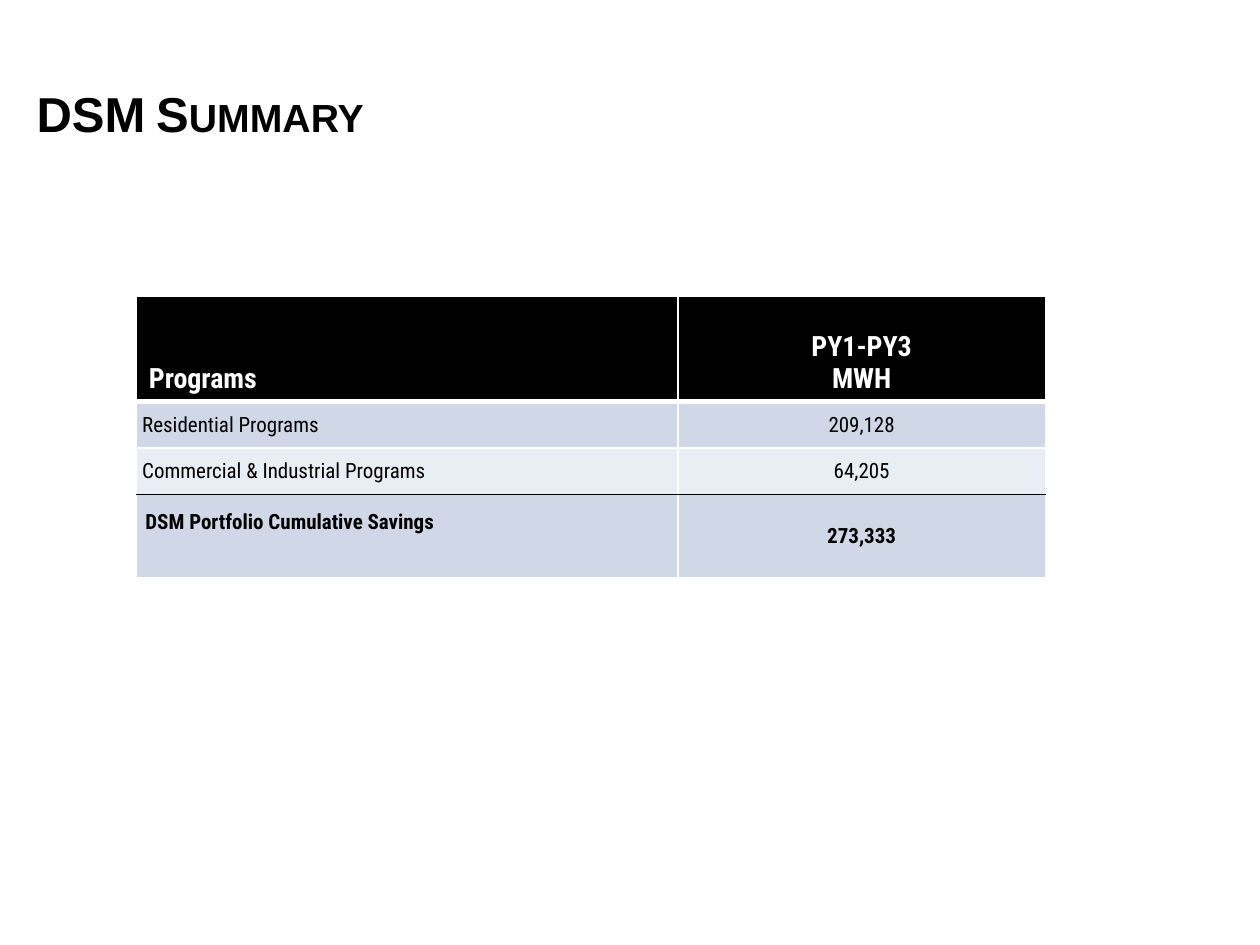
from lxml import etree
from pptx import Presentation
from pptx import util as u
from pptx.dml import color
from pptx.enum import text
from pptx.oxml import ns

# Content
TITLE = "DSM Summary"
ROWS = [
    (["Programs"], ["PY1-PY3", "MWH"]),
    (["Residential Programs"], ["209,128"]),
    (["Commercial & Industrial Programs"], ["64,205"]),
    (["DSM Portfolio Cumulative Savings"], ["273,333"]),
]

# Style, lengths in points
COLORS = {"black": "000000", "white": "FFFFFF", "band": "D0D8E8", "light": "E9EDF4"}
FILLS = ["black", "band", "light", "band"]
COL_WIDTHS = [309.6, 209.8]
ROW_HEIGHTS = [60, 26.5, 26.5, 47.5]
TABLE_LEFT, TABLE_TOP = 77.9, 169.5
HEAD, TOTAL = 0, len(ROWS) - 1
# Cell margins: left, top, right, bottom
HEAD_MARGINS = (7.2, 3.6, 7.2, 3.6)
LABEL_MARGINS = (3.4, 0.7, 0.7, 0)
VALUE_MARGINS = (0.7, 0.7, 0.7, 0)
TOTAL_MARGINS = (5.2, 0, 5.2, 15)


def rgb(name):
    return color.RGBColor.from_string(COLORS[name])


def add_run(p, words, font, size, bold, name):
    r = p.add_run()
    r.text = words
    r.font.name, r.font.size, r.font.bold = font, u.Pt(size), bold
    r.font.color.rgb = rgb(name)
    return r


def set_margins(box, margins):
    box.margin_left, box.margin_top, box.margin_right, box.margin_bottom = map(u.Pt, margins)


def add_border(tcPr, side, name, width):
    ln = etree.SubElement(tcPr, ns.qn(f"a:ln{side}"), w=str(u.Pt(width)))
    fill = etree.SubElement(ln, ns.qn("a:solidFill"))
    etree.SubElement(fill, ns.qn("a:srgbClr"), val=COLORS[name])


def format_cell(cell, lines, row, col):
    head, total = row == HEAD, row == TOTAL
    if head:
        margins = HEAD_MARGINS
    elif col:
        margins = VALUE_MARGINS
    else:
        margins = TOTAL_MARGINS if total else LABEL_MARGINS
    set_margins(cell, margins)
    cell.vertical_anchor = text.MSO_ANCHOR.BOTTOM if head else text.MSO_ANCHOR.MIDDLE

    tf = cell.text_frame
    for i, line in enumerate(lines):
        p = tf.add_paragraph() if i else tf.paragraphs[0]
        p.alignment = text.PP_ALIGN.CENTER if col else text.PP_ALIGN.LEFT
        add_run(p, line, "Roboto Condensed", 16 if head else 12,
                head or total, "white" if head else "black")

    # Borders come before the fill; a black rule sits above the total
    tcPr = cell._tc.get_or_add_tcPr()
    add_border(tcPr, "L", "white", 1)
    add_border(tcPr, "R", "white", 1)
    add_border(tcPr, "T", "black" if total else "white", 3 if row == HEAD + 1 else 1)
    add_border(tcPr, "B", "black" if row == TOTAL - 1 else "white", 3 if head else 1)
    cell.fill.solid()
    cell.fill.fore_color.rgb = rgb(FILLS[row])


prs = Presentation()
prs.slide_width, prs.slide_height = u.Pt(720), u.Pt(540)
s = prs.slides.add_slide(prs.slide_layouts[5])

# Title
title = s.shapes.title
title.left, title.top, title.width, title.height = map(u.Pt, (13.7, 8.6, 539.3, 67.7))
tf = title.text_frame
tf.word_wrap = True
tf.auto_size = text.MSO_AUTO_SIZE.NONE
tf.vertical_anchor = text.MSO_ANCHOR.TOP
set_margins(tf, (7.2, 39, 7.2, 0))
p = tf.paragraphs[0]
p.alignment = text.PP_ALIGN.LEFT
r = add_run(p, TITLE, "Arial", 28, True, "black")
r._r.get_or_add_rPr().set("cap", "small")

# Savings table
frame = s.shapes.add_table(len(ROWS), len(COL_WIDTHS), u.Pt(TABLE_LEFT), u.Pt(TABLE_TOP),
                           u.Pt(sum(COL_WIDTHS)), u.Pt(sum(ROW_HEIGHTS)))
table = frame.table
for column, width in zip(table.columns, COL_WIDTHS):
    column.width = u.Pt(width)
for i, (height, cells) in enumerate(zip(ROW_HEIGHTS, ROWS)):
    table.rows[i].height = u.Pt(height)
    for j, lines in enumerate(cells):
        format_cell(table.cell(i, j), lines, i, j)

prs.save("out.pptx")
